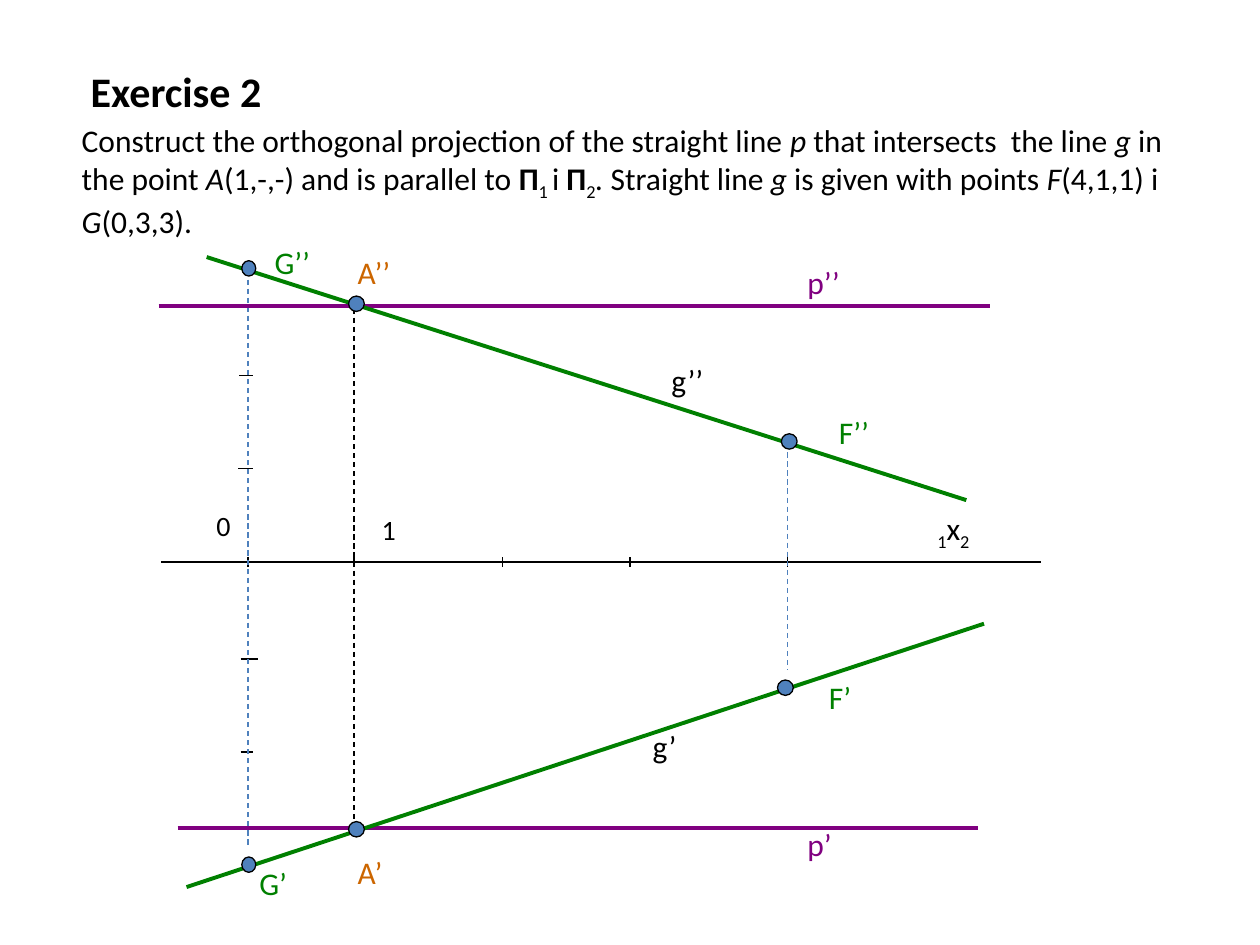
from lxml import etree
from pptx import Presentation
from pptx.dml.color import RGBColor
from pptx.enum.dml import MSO_LINE
from pptx.enum.shapes import MSO_CONNECTOR, MSO_SHAPE
from pptx.enum.text import MSO_ANCHOR, PP_ALIGN
from pptx.oxml.ns import qn
from pptx.util import Pt

STRAIGHT = MSO_CONNECTOR.STRAIGHT
OVAL = MSO_SHAPE.OVAL
DASH = MSO_LINE.DASH
TOP = MSO_ANCHOR.TOP
LEFT = PP_ALIGN.LEFT

BLACK = RGBColor(0x00, 0x00, 0x00)
BLUE = RGBColor(0x4F, 0x81, 0xBD)
GREEN = RGBColor(0x00, 0x80, 0x00)
PURPLE = RGBColor(0x80, 0x00, 0x80)
ORANGE = RGBColor(0xCC, 0x66, 0x00)

FONT = "Calibri"
TITLE_ONLY = 5
AXIS_Y = 321.1
ZERO_X, ONE_X, FOUR_X = 141.8, 202.3, 450

TASK = [
    ("Construct the orthogonal projection of the straight line ", ""),
    ("p ", "italic"), ("that intersects  the line ", ""), ("g ", "italic"),
    ("in the point ", ""), ("A", "italic"),
    ("(1,-,-) and is parallel to ", ""),
    ("Π", "bold"), ("1 ", "subscript"), ("i ", ""),
    ("Π", "bold"), ("2", "subscript"), (". ", "italic"),
    ("Straight line ", ""), ("g ", "italic"),
    ("is given with points ", ""), ("F", "italic"), ("(4,1,1) i ", ""),
    ("G", "italic"), ("(0,3,3).", ""),
]
AXIS_NAME = [("1", "subscript"), ("x", ""), ("2", "subscript")]

LABELS = [
    ("G’’", 149.8, 135.4, 47.5, GREEN),
    ("F’’", 472.3, 232.6, 35.3, GREEN),
    ("F’", 466.6, 383.8, 39.6, GREEN),
    ("G’", 141.1, 490.3, 36, GREEN),
    ("p’’", 454.3, 146.9, 113.8, PURPLE),
    ("p’", 454.3, 468, 78.5, PURPLE),
    ("g’’", 376.6, 203, 44.6, BLACK),
    ("g’", 365.8, 411.8, 101.5, BLACK),
    ("A’", 197.3, 483.8, 45.4, ORANGE),
    ("A’’", 197.3, 141.1, 67.7, ORANGE),
]
POINTS = [
    (142.2, 153.4, 8), (142.2, 494.1, 8),
    (203.7, 173.6, 9), (203.7, 473.9, 9),
    (451, 252.3, 9), (448.8, 393, 9),
]
AXIS_TICKS = [(ZERO_X, 3), (ONE_X, 2), (287.3, 2.7), (360, 2.7), (FOUR_X, 3)]
HEIGHT_TICKS = [
    (136.8, 144.7, 214.6), (136.1, 144.7, 267.8),
    (137.5, 147.6, 376.6), (137.5, 144.7, 429.8),
]


def write_text(shape, runs, size=18, color=BLACK):
    frame = shape.text_frame
    frame.word_wrap = True
    frame.vertical_anchor = TOP
    paragraph = frame.paragraphs[0]
    paragraph.alignment = LEFT
    for text, style in runs:
        run = paragraph.add_run()
        run.text = text
        run.font.name = FONT
        run.font.size = Pt(size)
        run.font.color.rgb = color
        run.font.bold = style == "bold"
        run.font.italic = style == "italic"
        if style == "subscript":
            run.font._element.set("baseline", "-25000")


def add_text(slide, runs, left, top, width, height=28.8, **text_format):
    box = slide.shapes.add_textbox(Pt(left), Pt(top), Pt(width), Pt(height))
    write_text(box, runs, **text_format)


def add_title(slide, text):
    title = slide.shapes.title
    title.left, title.top = Pt(44.6), Pt(33.8)
    title.width, title.height = Pt(186.5), Pt(36)
    write_text(title, [(text, "bold")], size=24)


def add_line(slide, start_x, start_y, end_x, end_y,
             color=BLACK, width=0.75, dash=None):
    line = slide.shapes.add_connector(
        STRAIGHT, Pt(start_x), Pt(start_y), Pt(end_x), Pt(end_y))
    line.line.color.rgb = color
    line.line.width = Pt(width)
    if dash:
        line.line.dash_style = dash
    etree.SubElement(line._element.spPr, qn("a:effectLst"))


def add_point(slide, center_x, center_y, width, height=8.8):
    point = slide.shapes.add_shape(
        OVAL, Pt(center_x - width / 2), Pt(center_y - height / 2),
        Pt(width), Pt(height))
    point.shadow.inherit = False
    point.fill.solid()
    point.fill.fore_color.rgb = BLUE
    point.line.color.rgb = BLACK
    point.line.width = Pt(0.75)


def add_axis(slide):
    add_line(slide, 92.2, AXIS_Y, 594.7, AXIS_Y)
    for x, reach in AXIS_TICKS:
        add_line(slide, x, AXIS_Y - reach, x, AXIS_Y + reach)
    for start_x, end_x, y in HEIGHT_TICKS:
        add_line(slide, start_x, y, end_x, y)
    add_text(slide, [("0", "")], 116.6, 287.3, 21.6, 26.6, size=16)
    add_text(slide, [("1", "")], 211, 289.4, 30.2, 26.6, size=16)
    add_text(slide, AXIS_NAME, 528.5, 287.3, 73.4)


def add_projections(slide):
    add_line(slide, FOUR_X, 258.5, FOUR_X, 383, color=BLUE, dash=DASH)
    add_line(slide, ZERO_X, 159.8, ZERO_X, 483.1, color=BLUE, dash=DASH)
    add_line(slide, 90.7, 175, 565.9, 175, color=PURPLE, width=2.25)
    add_line(slide, 101.5, 473, 558.7, 473, color=PURPLE, width=2.25)
    add_line(slide, 118.1, 146.9, 552.2, 285.8, color=GREEN, width=2.25)
    add_line(slide, 106.6, 506.9, 562.3, 356.4, color=GREEN, width=2.25)
    add_line(slide, ONE_X, 176.4, ONE_X, 475.2, dash=DASH)


def main():
    presentation = Presentation()
    presentation.slide_width, presentation.slide_height = Pt(720), Pt(540)
    slide = presentation.slides.add_slide(
        presentation.slide_layouts[TITLE_ONLY])
    add_title(slide, "Exercise 2")
    add_text(slide, TASK, 39.6, 65.5, 635, 72.7)
    add_axis(slide)
    add_projections(slide)
    for text, left, top, width, color in LABELS:
        add_text(slide, [(text, "")], left, top, width, color=color)
    for center_x, center_y, width in POINTS:
        add_point(slide, center_x, center_y, width)
    presentation.save("out.pptx")


if __name__ == "__main__":
    main()
